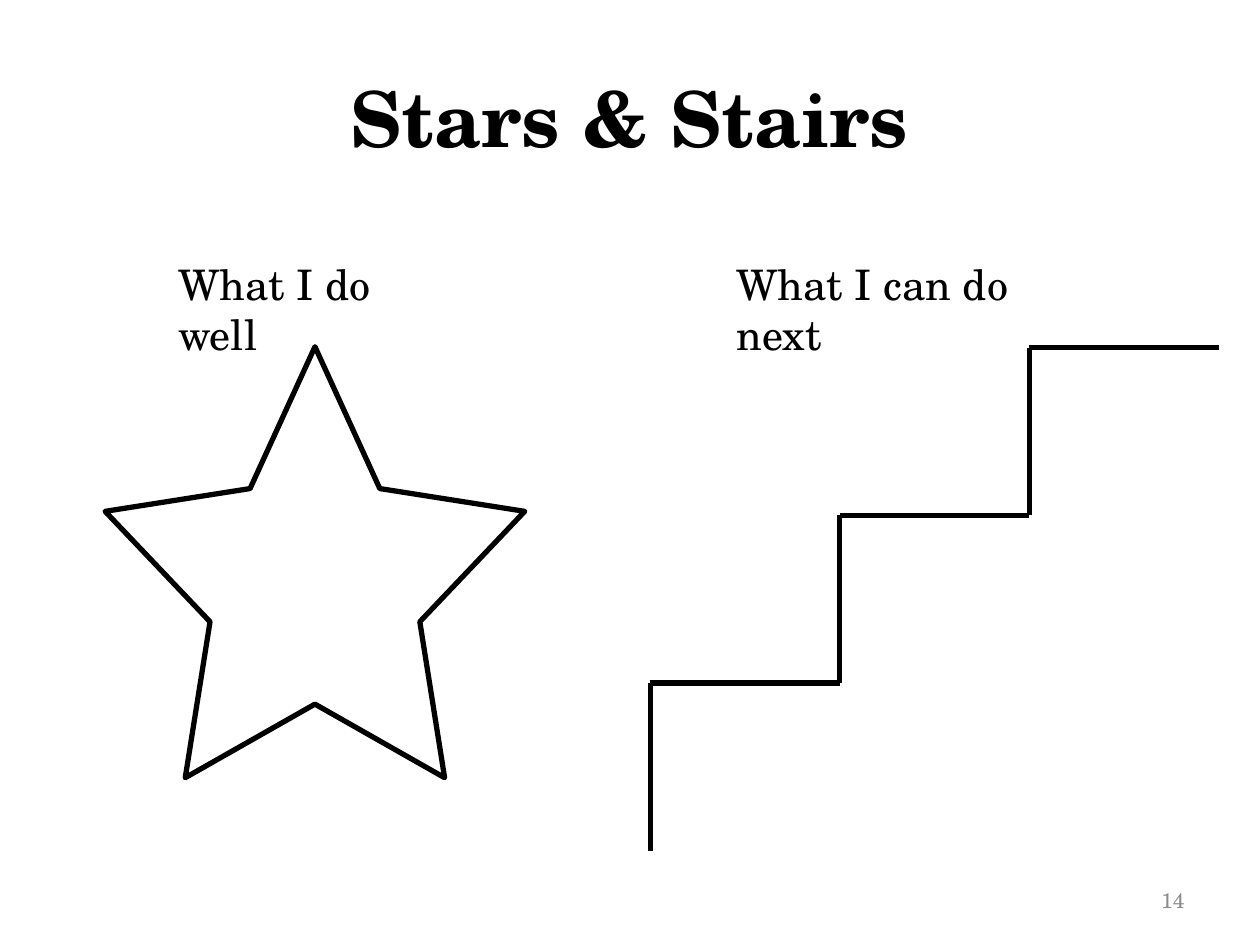
from lxml.etree import SubElement
from pptx import Presentation
from pptx.dml.color import RGBColor
from pptx.enum.shapes import MSO_CONNECTOR, MSO_SHAPE
from pptx.enum.text import MSO_ANCHOR, PP_ALIGN
from pptx.oxml.ns import qn
from pptx.util import Cm, Pt

FONT = "TeX Gyre Schola"
BLACK = "000000"
GRAY = "8C8C8C"
LINE_WIDTH = Pt(3)


def color(value):
    return RGBColor.from_string(value)


def add_text(page, text, left, top, width, height, size, fill=BLACK, bold=False,
             align=PP_ALIGN.LEFT, anchor=MSO_ANCHOR.TOP):
    box = page.shapes.add_textbox(Cm(left), Cm(top), Cm(width), Cm(height))
    frame = box.text_frame
    frame.text = text
    frame.word_wrap = True
    frame.vertical_anchor = anchor
    paragraph = frame.paragraphs[0]
    paragraph.alignment = align
    for span in paragraph.runs:
        span.font.name = FONT
        span.font.size = Pt(size)
        span.font.bold = bold
        span.font.color.rgb = color(fill)


def style_line(line):
    line.color.rgb = color(BLACK)
    line.width = LINE_WIDTH


def add_star(page, left, top, width, height):
    star = page.shapes.add_shape(MSO_SHAPE.STAR_5_POINT, Cm(left), Cm(top), Cm(width), Cm(height))
    star.adjustments[0] = 0.25
    star.shadow.inherit = False
    star.fill.background()
    style_line(star.line)


def add_line(page, start, end):
    (x1, y1), (x2, y2) = start, end
    line = page.shapes.add_connector(MSO_CONNECTOR.STRAIGHT, Cm(x1), Cm(y1), Cm(x2), Cm(y2))
    style_line(line.line)
    SubElement(line._element.spPr, qn("a:effectLst"))


def add_stairs(page, left, bottom, run, rise, steps):
    for step in range(steps):
        x = left + step * run
        y = bottom - step * rise
        corner = (x, y - rise)
        add_line(page, (x, y), corner)
        add_line(page, corner, (x + run, y - rise))


def main():
    deck = Presentation()
    deck.slide_width = Cm(25.4)
    deck.slide_height = Cm(19.05)
    page = deck.slides.add_slide(deck.slide_layouts[6])
    add_text(page, "Stars & Stairs", 1.27, 0.76, 22.86, 3.18, 44, bold=True,
             align=PP_ALIGN.CENTER, anchor=MSO_ANCHOR.MIDDLE)
    add_star(page, 2.12, 6.99, 8.46, 8.69)
    add_text(page, "What I do well", 3.35, 5.08, 6.02, 1.27, 24)
    add_text(page, "What I can do next", 14.6, 5.08, 7.65, 1.27, 24)
    add_stairs(page, left=13.11, bottom=17.15, run=3.82, rise=3.38, steps=3)
    add_text(page, "14", 18.2, 17.65, 5.93, 1.01, 12, fill=GRAY,
             align=PP_ALIGN.RIGHT, anchor=MSO_ANCHOR.MIDDLE)
    deck.save("out.pptx")


if __name__ == "__main__":
    main()
